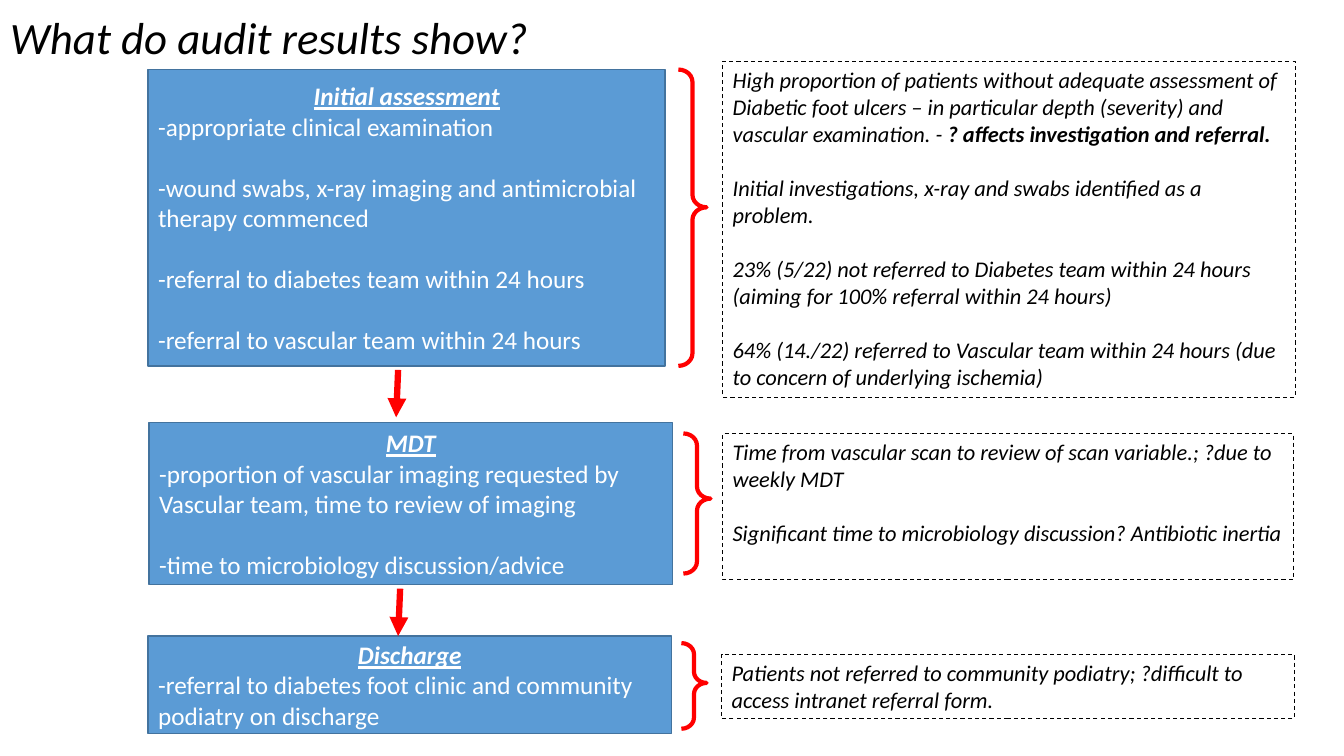
from pptx import Presentation
from pptx.dml.color import RGBColor
from pptx.enum.dml import MSO_LINE
from pptx.enum.shapes import MSO_CONNECTOR, MSO_SHAPE as SHAPE
from pptx.enum.text import MSO_ANCHOR as ANCHOR, PP_ALIGN as ALIGN
from pptx.oxml.ns import qn
from pptx.util import Pt
from lxml.etree import SubElement

RED, BLUE, EDGE, BLACK, WHITE = "FF0000", "5B9BD5", "43739E", "000000", "FFFFFF"

STAGES = [
    dict(
        step=(105.84, 49.68, 369.36, 211.68),
        brace=(484.56, 49.68, 20.16, 211.68),
        note=(516.24, 43.92, 408.96, 239.76),
        heading="Initial assessment",
        items=["-appropriate clinical examination",
               "-wound swabs, x-ray imaging and antimicrobial therapy commenced",
               "-referral to diabetes team within 24 hours",
               "-referral to vascular team within 24 hours"],
        findings=[("High proportion of patients without adequate assessment of Diabetic "
                   "foot ulcers – in particular depth (severity) and vascular examination. - ",
                   "? affects investigation and referral."),
                  ("Initial investigations, x-ray and swabs identified as a problem.",),
                  ("23% (5/22) not referred to Diabetes team within 24 hours "
                   "(aiming for 100% referral within 24 hours)",),
                  ("64% (14./22) referred to Vascular team within 24 hours "
                   "(due to concern of underlying ischemia)",)]),
    dict(
        step=(106.56, 301.68, 373.68, 115.92),
        brace=(488.16, 309.6, 19.44, 100.08),
        note=(516.24, 309.6, 407.52, 104.4),
        heading="MDT",
        items=["-proportion of vascular imaging requested by Vascular team, "
               "time to review of imaging",
               "-time to microbiology discussion/advice"],
        findings=[("Time from vascular scan to review of scan variable.; ?due to weekly MDT",),
                  ("Significant time to microbiology discussion? Antibiotic inertia",)]),
    dict(
        step=(105.84, 454.32, 373.68, 69.84),
        brace=(486.72, 459.36, 18, 61.2),
        note=(515.52, 467.28, 408.96, 46.08),
        heading="Discharge",
        items=["-referral to diabetes foot clinic and community podiatry on discharge"],
        findings=[("Patients not referred to community podiatry; "
                   "?difficult to access intranet referral form.",)]),
]
ARROWS = [(284.4, 264.24), (285.84, 420.48)]


def rgb(color):
    return RGBColor.from_string(color)


def add_run(p, text, size, color, **font):
    r = p.add_run()
    r.text = text
    r.font.color.rgb = rgb(color)
    for name, value in dict(font, name="Calibri", size=Pt(size)).items():
        setattr(r.font, name, value)


def add_box(s, kind, box, line, width, fill=None):
    sp = s.shapes.add_shape(kind, *map(Pt, box))
    sp.shadow.inherit = False
    if fill:
        sp.fill.solid()
        sp.fill.fore_color.rgb = rgb(fill)
    else:
        sp.fill.background()
    sp.line.color.rgb = rgb(line)
    sp.line.width = Pt(width)
    return sp


def add_paragraph(tf, first, align, gap):
    p = tf.paragraphs[0] if first else tf.add_paragraph()
    p.alignment = align
    p.space_before = Pt(gap)
    return p


def add_title(s, box, text):
    sp = s.shapes.title
    for name, value in zip(("left", "top", "width", "height"), box):
        setattr(sp, name, Pt(value))
    tf = sp.text_frame
    tf.vertical_anchor = ANCHOR.MIDDLE
    p = tf.paragraphs[0]
    p.alignment = ALIGN.LEFT
    p.line_spacing = 0.9
    add_run(p, text, 32, BLACK, italic=True)


def add_step(s, box, heading, items):
    tf = add_box(s, SHAPE.RECTANGLE, box, EDGE, 1, BLUE).text_frame
    tf.word_wrap = True
    tf.vertical_anchor = ANCHOR.MIDDLE
    p = add_paragraph(tf, True, ALIGN.CENTER, 0)
    add_run(p, heading, 18, WHITE, bold=True, italic=True, underline=True)
    for i, item in enumerate(items):
        p = add_paragraph(tf, False, ALIGN.LEFT, 22 if i else 0)
        add_run(p, item, 18, WHITE)


def add_note(s, box, findings):
    sp = add_box(s, SHAPE.RECTANGLE, box, BLACK, 0.75)
    sp.line.dash_style = MSO_LINE.DASH
    tf = sp.text_frame
    tf.word_wrap = True
    tf.vertical_anchor = ANCHOR.TOP
    for i, parts in enumerate(findings):
        p = add_paragraph(tf, i == 0, ALIGN.LEFT, 19.5 if i else 0)
        for j, part in enumerate(parts):
            add_run(p, part, 16, BLACK, italic=True, bold=j > 0)


def add_brace(s, box):
    sp = add_box(s, SHAPE.RIGHT_BRACE, box, RED, 3)
    sp.adjustments[0] = 0.443
    sp.adjustments[1] = 0.465


def add_arrow(s, x, y):
    c = s.shapes.add_connector(MSO_CONNECTOR.STRAIGHT, Pt(x), Pt(y), Pt(x - 1.44), Pt(y + 33.84))
    c.line.color.rgb = rgb(RED)
    c.line.width = Pt(4.5)
    SubElement(c.line._get_or_add_ln(), qn("a:tailEnd"), type="triangle")
    SubElement(c._element.spPr, qn("a:effectLst"))


def add_stage(s, stage):
    add_note(s, stage["note"], stage["findings"])
    add_brace(s, stage["brace"])
    add_step(s, stage["step"], stage["heading"], stage["items"])


def main():
    prs = Presentation()
    prs.slide_width, prs.slide_height = Pt(960), Pt(540)
    s = prs.slides.add_slide(prs.slide_layouts[5])
    add_title(s, (0, -23.76, 828, 104.4), "What do audit results show?")
    for stage in STAGES:
        add_stage(s, stage)
    for x, y in ARROWS:
        add_arrow(s, x, y)
    prs.save("out.pptx")


if __name__ == "__main__":
    main()
